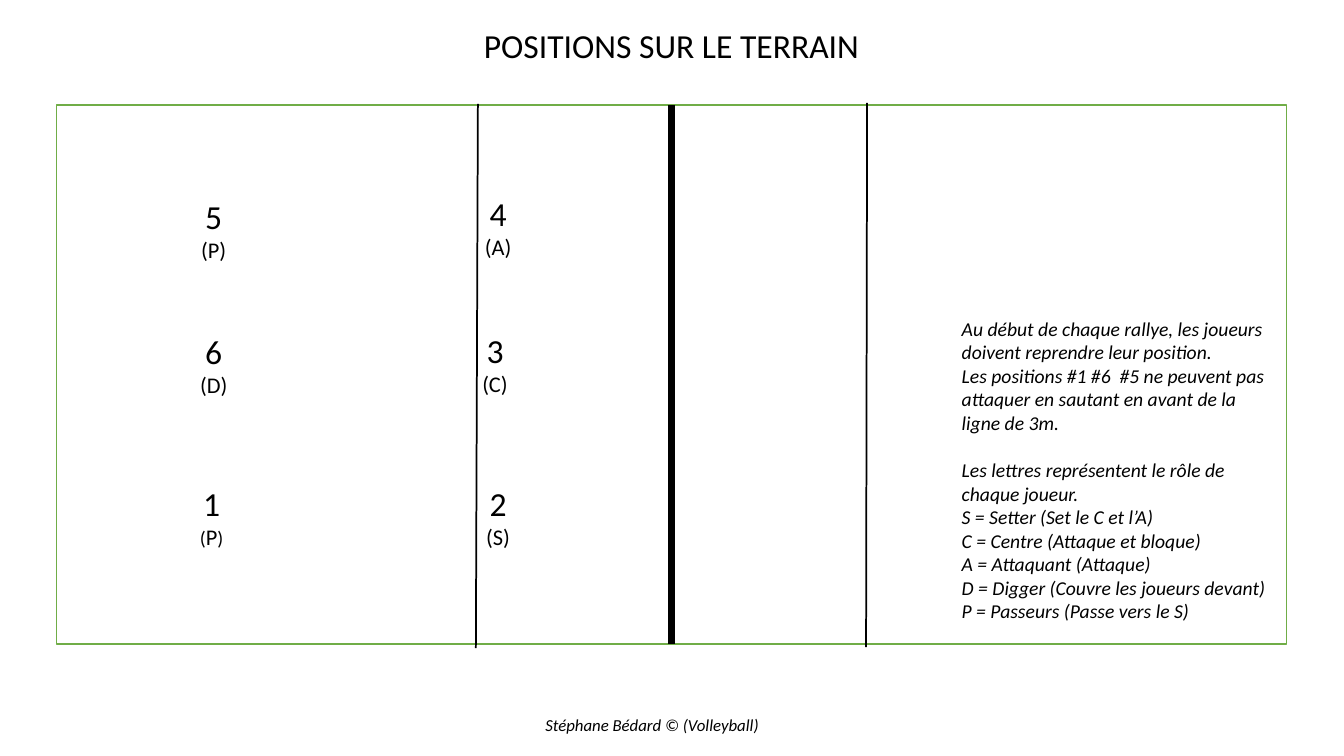
from pptx import Presentation
from pptx.dml.color import RGBColor
from pptx.enum.shapes import MSO_CONNECTOR, MSO_SHAPE
from pptx.enum.text import MSO_ANCHOR, MSO_AUTO_SIZE, PP_ALIGN
from pptx.oxml.ns import qn
from pptx.util import Inches, Pt
from lxml import etree

BLACK, WHITE, GREEN = "000000", "FFFFFF", "70AD47"
TITLE = "POSITIONS SUR LE TERRAIN"
CREDIT = "Stéphane Bédard © (Volleyball)"
POSITION_RULES = [
    "Au début de chaque rallye, les joueurs",
    "doivent reprendre leur position.",
    "Les positions #1 #6  #5 ne peuvent pas attaquer en sautant en avant de la ligne de 3m.",
]
ROLE_LEGEND = [
    "Les lettres représentent le rôle de",
    "chaque joueur.",
    "S = Setter (Set le C et l’A)",
    "C = Centre (Attaque et bloque)",
    "A = Attaquant (Attaque)",
    "D = Digger (Couvre les joueurs devant)",
    "P = Passeurs (Passe vers le S)",
]
# Number, role, bracket size, centre and top measured from the court's corner
PLAYERS = [
    ("2", "S", 16, 4.38, 3.7),
    ("3", "C", 16, 4.35, 2.18),
    ("4", "A", 16, 4.38, 0.82),
    ("6", "D", 16, 1.56, 2.19),
    ("5", "P", 16, 1.56, 0.85),
    ("1", "P", 14, 1.54, 3.7),
]


def color(hex_code):
    return RGBColor.from_string(hex_code)


def style(font, size, italic=False):
    font.name = "Calibri"
    font.size = Pt(size)
    font.italic = italic
    font.color.rgb = color(BLACK)


def add_text_frame(slide, left, top, width, height, wrap=False):
    box = slide.shapes.add_textbox(Inches(left), Inches(top), Inches(width), Inches(height))
    box.text_frame.word_wrap = wrap
    box.text_frame.auto_size = MSO_AUTO_SIZE.SHAPE_TO_FIT_TEXT
    return box.text_frame


def add_line(slide, x1, y1, x2, y2, weight):
    line = slide.shapes.add_connector(
        MSO_CONNECTOR.STRAIGHT, Inches(x1), Inches(y1), Inches(x2), Inches(y2))
    line.line.color.rgb = color(BLACK)
    line.line.width = Pt(weight)
    etree.SubElement(line._element.spPr, qn("a:effectLst"))
    return line


def add_title(slide, left, top, width, height):
    title = slide.shapes.title
    title.left, title.top = Inches(left), Inches(top)
    title.width, title.height = Inches(width), Inches(height)
    frame = title.text_frame
    frame.text = TITLE
    frame.auto_size = MSO_AUTO_SIZE.NONE
    frame.vertical_anchor = MSO_ANCHOR.MIDDLE
    paragraph = frame.paragraphs[0]
    paragraph.alignment = PP_ALIGN.CENTER
    paragraph.line_spacing = 0.9
    style(paragraph.runs[0].font, 24)


def add_court(slide, left, top, width, height):
    """Draw the court outline, the net and both three-metre lines."""
    court = slide.shapes.add_shape(
        MSO_SHAPE.RECTANGLE, Inches(left), Inches(top), Inches(width), Inches(height))
    court.shadow.inherit = False
    court.fill.solid()
    court.fill.fore_color.rgb = color(WHITE)
    court.line.color.rgb = color(GREEN)
    court.line.width = Pt(1)

    middle = left + width / 2
    net = add_line(slide, middle, top, middle, top + height, 4.5)
    net.begin_connect(court, 0)
    net.end_connect(court, 2)
    add_line(slide, left + 4.18, top - 0.01, left + 4.16, top + height + 0.04, 1.25)
    add_line(slide, left + 8.04, top - 0.02, left + 8.03, top + height + 0.03, 1.25)


def add_player(slide, number, role, bracket_size, center, top):
    width = 0.5
    frame = add_text_frame(slide, center - width / 2, top, width, 0.77)
    frame.text = number
    style(frame.paragraphs[0].runs[0].font, 24)
    role_paragraph = frame.add_paragraph()
    if bracket_size == 16:
        role_parts = [(f"({role})", 16)]
    else:
        role_parts = [("(", bracket_size), (role, 16), (")", bracket_size)]
    for text, size in role_parts:
        run = role_paragraph.add_run()
        run.text = text
        style(run.font, size)
    for paragraph in frame.paragraphs:
        paragraph.alignment = PP_ALIGN.CENTER


def add_notes_block(slide, left, top, width, height):
    """Write the position rules, then the role legend one line lower."""
    frame = add_text_frame(slide, left, top, width, height, wrap=True)
    frame.text = "\n".join(POSITION_RULES + ROLE_LEGEND)
    for paragraph in frame.paragraphs:
        style(paragraph.runs[0].font, 14, italic=True)
    frame.paragraphs[len(POSITION_RULES)].space_before = Pt(17)


def add_credit(slide, left, top, width, height):
    frame = add_text_frame(slide, left, top, width, height)
    frame.text = CREDIT
    style(frame.paragraphs[0].runs[0].font, 12, italic=True)


def main():
    presentation = Presentation()
    presentation.slide_width = Inches(13.33)
    presentation.slide_height = Inches(7.5)
    slide = presentation.slides.add_slide(presentation.slide_layouts[5])

    court_left, court_top = 0.56, 1.04
    add_title(slide, 1.66, 0.24, 10, 0.47)
    add_court(slide, court_left, court_top, 12.2, 5.35)
    for number, role, bracket_size, center, top in PLAYERS:
        add_player(slide, number, role, bracket_size, court_left + center, court_top + top)
    add_notes_block(slide, court_left + 8.88, court_top + 2.05, 3.34, 3.4)
    add_credit(slide, 5.31, 7.04, 2.33, 0.3)
    presentation.save("out.pptx")


if __name__ == "__main__":
    main()
